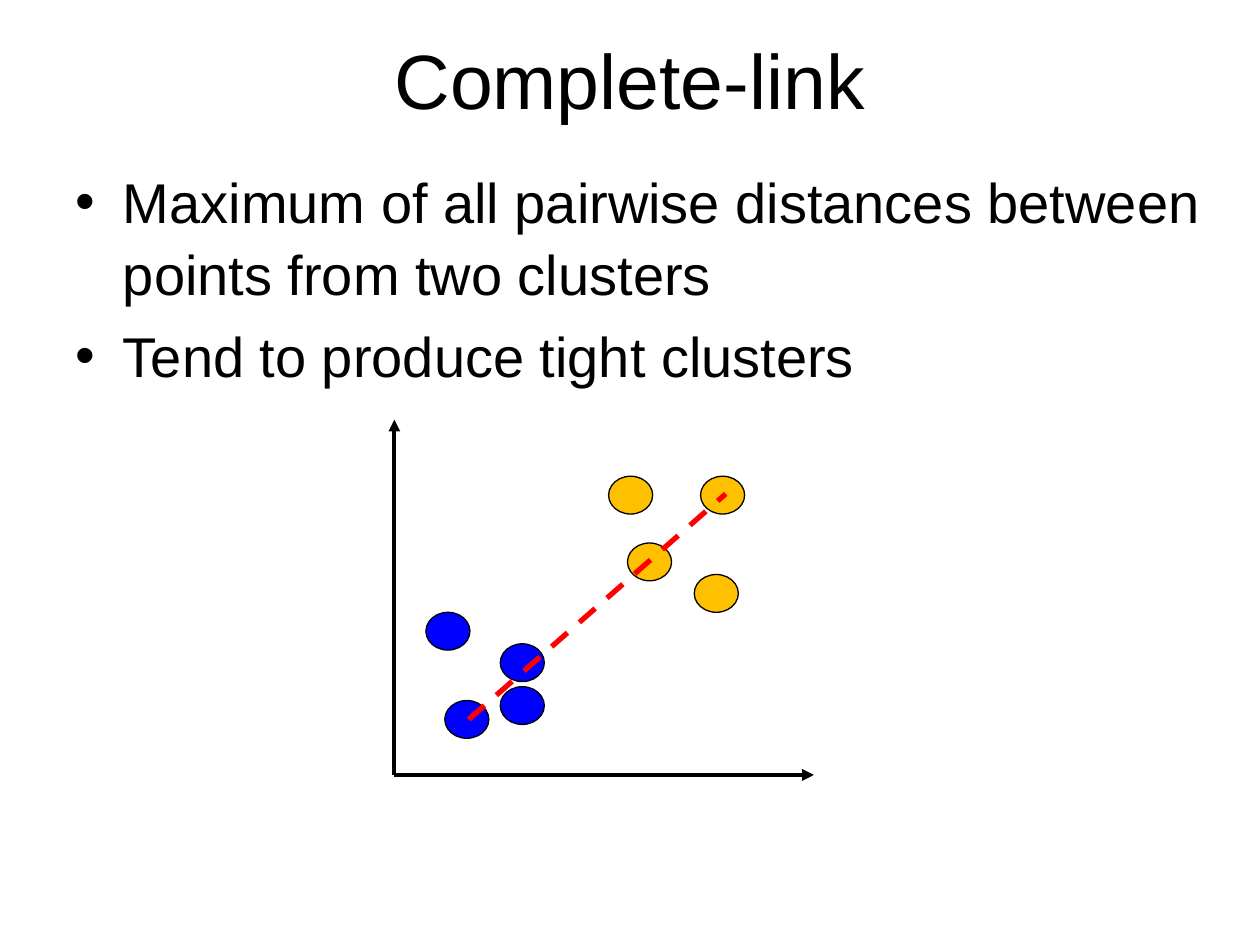
"""Build the complete-link clustering slide."""
from lxml.etree import SubElement
from pptx import Presentation
from pptx.dml.color import RGBColor
from pptx.enum.dml import MSO_LINE
from pptx.enum.shapes import MSO_CONNECTOR, MSO_SHAPE
from pptx.enum.text import MSO_ANCHOR, MSO_AUTO_SIZE, PP_ALIGN
from pptx.oxml.ns import qn
from pptx.util import Inches, Pt

BLACK = RGBColor(0x00, 0x00, 0x00)
GOLD = RGBColor(0xFF, 0xC0, 0x00)
BLUE = RGBColor(0x00, 0x00, 0xFF)
RED = RGBColor(0xFF, 0x00, 0x00)

deck = Presentation()
deck.slide_width, deck.slide_height = Inches(10), Inches(7.5)
col, row = deck.slide_width / 100, deck.slide_height / 75
slide = deck.slides.add_slide(deck.slide_layouts[1])
title, body = slide.placeholders


def write(para, text, size):
    run = para.add_run()
    run.text = text
    run.font.name = "Arial"
    run.font.size = Pt(size)
    run.font.color.rgb = BLACK


def draw(start, end, color, width):
    line = slide.shapes.add_connector(
        MSO_CONNECTOR.STRAIGHT,
        int(start[0] * col), int(start[1] * row),
        int(end[0] * col), int(end[1] * row))
    line.line.color.rgb = color
    line.line.width = Pt(width)
    SubElement(line._element.spPr, qn("a:effectLst"))
    return line


for box, (x, y, w, h) in ((title, (5, 0, 90, 12.5)),
                          (body, (5, 12.5, 93.3, 54.5))):
    box.left, box.top = int(x * col), int(y * row)
    box.width, box.height = int(w * col), int(h * row)
    box.text_frame.auto_size = MSO_AUTO_SIZE.NONE

title.text_frame.vertical_anchor = MSO_ANCHOR.MIDDLE
head = title.text_frame.paragraphs[0]
head.alignment = PP_ALIGN.CENTER
write(head, "Complete-link", 44)

points = ("Maximum of all pairwise distances between points from two clusters",
          "Tend to produce tight clusters")
frame = body.text_frame
for i, text in enumerate(points):
    para = frame.add_paragraph() if i else frame.paragraphs[0]
    para.line_spacing = 1.06
    write(para, text, 32)

zero = (31.3, 61.5)
for start, end, tip in (((31.3, 33.3), zero, "a:headEnd"),
                        (zero, (64.6, 61.5), "a:tailEnd")):
    axis = draw(start, end, BLACK, 2.25)
    SubElement(axis.line._get_or_add_ln(), qn(tip), type="triangle")

dots = [(48.3, 37.8, GOLD), (55.6, 37.8, GOLD), (55.1, 45.6, GOLD),
        (49.8, 43.1, GOLD), (39.7, 51.1, BLUE), (39.7, 54.5, BLUE),
        (35.3, 55.6, BLUE), (33.8, 48.6, BLUE)]
for x, y, color in dots:
    dot = slide.shapes.add_shape(
        MSO_SHAPE.OVAL, int(x * col), int(y * row),
        int(3.5 * col), int(3 * row))
    dot.shadow.inherit = False
    dot.fill.solid()
    dot.fill.fore_color.rgb = color
    dot.line.color.rgb = BLACK
    dot.line.width = Pt(0.75)

link = draw((37.2, 57.1), (57.6, 39.2), RED, 3)
link.line.dash_style = MSO_LINE.DASH

deck.save("out.pptx")
